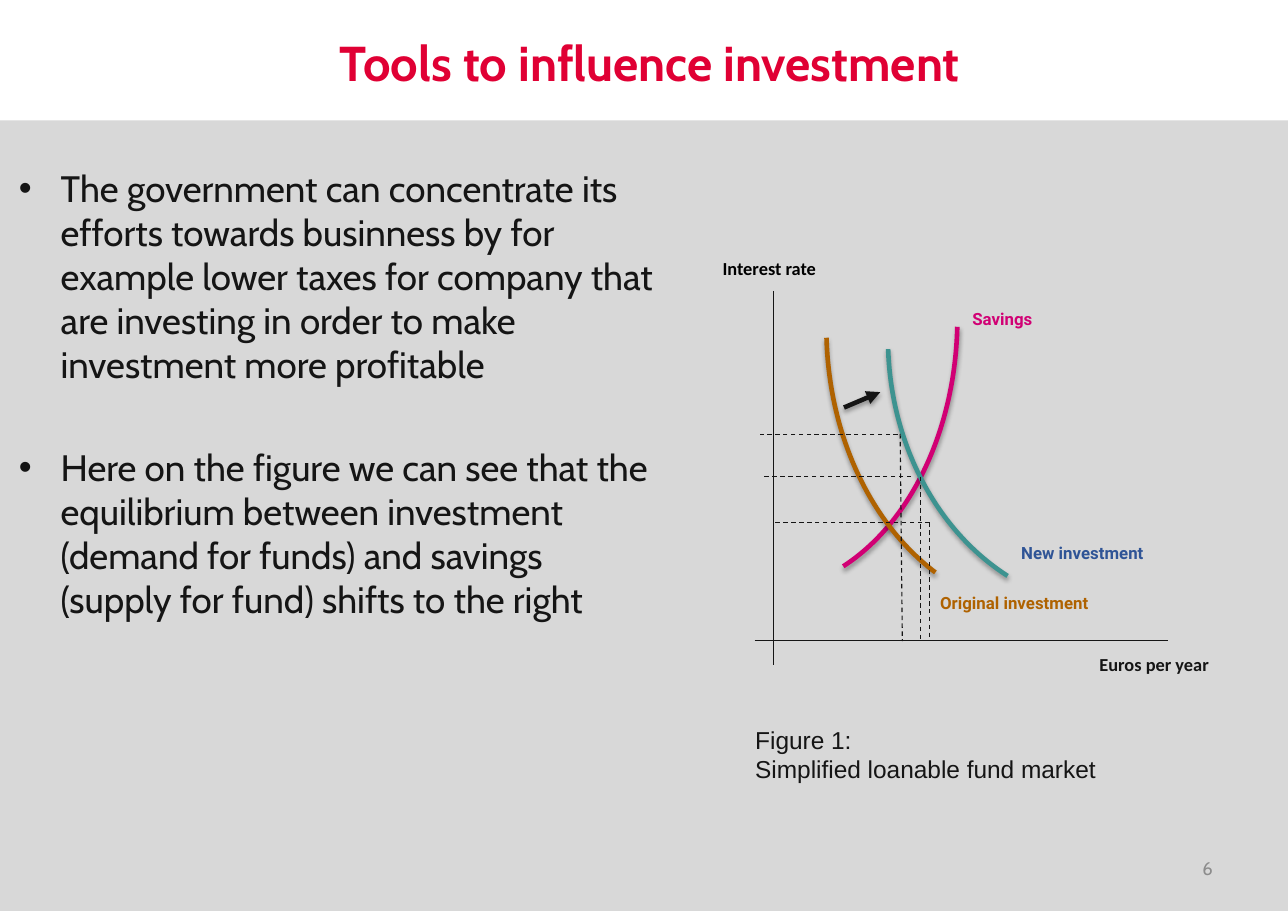
from lxml import etree
from pptx import Presentation
from pptx.dml.color import RGBColor
from pptx.enum.dml import MSO_LINE
from pptx.enum.shapes import MSO_CONNECTOR, MSO_SHAPE
from pptx.enum.text import MSO_ANCHOR, PP_ALIGN
from pptx.oxml.ns import qn
from pptx.util import Inches, Pt

WIDE, HIGH = Inches(11.69), Inches(8.27)
RECT, ARC = MSO_SHAPE.RECTANGLE, MSO_SHAPE.ARC
LINE, DASH = MSO_CONNECTOR.STRAIGHT, MSO_LINE.DASH
LEFT, MID, RIGHT = PP_ALIGN.LEFT, PP_ALIGN.CENTER, PP_ALIGN.RIGHT
TOP, CENTRE = MSO_ANCHOR.TOP, MSO_ANCHOR.MIDDLE

INK, RED, GREY, BAND, BLACK = "151515", "E00034", "8C8C8C", "D8D8D8", "000000"
PINK, BROWN, TEAL, BLUE = "D10074", "AF6200", "3D9390", "2F5496"

HEAD = {"name": "Cabin", "size": Pt(32), "bold": True}
BODY = {"name": "Cabin", "size": Pt(24)}
PAGE = {"name": "Cabin", "size": Pt(12)}
AXIS = {"name": "Calibri", "size": Pt(12), "bold": True}
CURVE = {"name": "Roboto", "size": Pt(11), "bold": True}
NOTE = {"name": "Arial", "size": Pt(16)}
THIN = {"width": Pt(0.75)}
GUIDE = {"width": Pt(0.75), "dash_style": DASH}
THICK = {"width": Pt(3)}

POINTS = [
    "The government can concentrate its efforts towards businness by for example lower taxes "
    "for company that are investing in order to make investment more profitable",
    "Here on the figure we can see that the equilibrium between investment (demand for funds) "
    "and savings (supply for fund) shifts to the right",
]
LABELS = [
    ("Interest rate", (50.75, 27.6, 17.96, 4.11), AXIS, BLACK, MID),
    ("Euros per year", (84.52, 71.15, 15.48, 8.1), AXIS, INK, LEFT),
    ("Savings", (74.65, 33.25, 25.35, 5.32), CURVE, PINK, LEFT),
    ("New investment", (78.44, 59.01, 20.19, 3.99), CURVE, BLUE, LEFT),
    ("Original investment", (72.15, 64.45, 15.31, 3.51), CURVE, BROWN, LEFT),
]
ARCS = [
    ((43.8, 4.84, 30.54, 60.1), PINK, 42.98, False),
    ((64.16, 4.84, 34.22, 62.27), BROWN, 39.32, True),
    ((68.95, 7.62, 35.33, 59.13), TEAL, 39.32, True),
]
AXES = [(60.05, 31.92, 60.05, 73.04), (58.6, 70.28, 90.68, 70.28)]
GUIDES = [
    (72.2, 57.32, 72.2, 70.25), (72.2, 57.32, 60.05, 57.32),
    (69.72, 47.7, 59.02, 47.7), (69.89, 47.64, 70.06, 70.37),
    (70.74, 52.33, 59.28, 52.33), (71.47, 52.33, 71.47, 70.37),
]


def place(box):
    """Turn percent shares of the slide into lengths."""
    return [int(share * side / 100) for share, side in zip(box, (WIDE, HIGH) * 2)]


def tint(code):
    """Turn a hex string into a colour."""
    return RGBColor.from_string(code)


def apply(item, look):
    """Set each format value on an item."""
    for key, value in look.items():
        setattr(item, key, value)


def stroke(shape, look, code):
    """Style the line of a shape."""
    shape.line.fill.solid()
    shape.line.fill.fore_color.rgb = tint(code)
    apply(shape.line, look)


def shade(shape, soft=False):
    """Give a shape an effect list, with a soft shadow if asked."""
    props = shape._element.spPr
    effects = etree.SubElement(props, qn("a:effectLst"))
    if soft:
        cast = etree.SubElement(effects, qn("a:outerShdw"), blurRad=str(Pt(3.1)),
                                dist=str(Pt(1.8)), dir="5400000", rotWithShape="0")
        hue = etree.SubElement(cast, qn("a:srgbClr"), val=BLACK)
        etree.SubElement(hue, qn("a:alpha"), val="35000")


def bullet(para):
    """Hang a round bullet on a paragraph."""
    props = para._p.get_or_add_pPr()
    props.set("marL", str(Inches(0.38)))
    props.set("indent", str(-Inches(0.38)))
    etree.SubElement(props, qn("a:buFont"), typeface="Arial")
    etree.SubElement(props, qn("a:buChar"), char="•")


def write(slide, lines, box, look, code, align=LEFT, anchor=TOP, gap=None):
    """Add a text box; a gap makes its lines a bulleted list."""
    frame = slide.shapes.add_textbox(*place(box)).text_frame
    apply(frame, {"word_wrap": True, "vertical_anchor": anchor})
    for rank, line in enumerate(lines):
        para = frame.add_paragraph() if rank else frame.paragraphs[0]
        para.alignment = align
        if gap:
            bullet(para)
            if rank:
                para.space_before = gap
        run = para.add_run()
        run.text = line
        apply(run.font, look)
        run.font.color.rgb = tint(code)


def band(slide, box, code):
    """Add a plain filled band."""
    shape = slide.shapes.add_shape(RECT, *place(box))
    shape.shadow.inherit = False
    shape.fill.solid()
    shape.fill.fore_color.rgb = tint(code)
    shape.line.fill.background()


def curve(slide, box, code, end, flip):
    """Add an arc that ends at a given adjustment value."""
    shape = slide.shapes.add_shape(ARC, *place(box))
    for rank, value in enumerate((1.57, end)):
        shape.adjustments[rank] = value
    if flip:
        shape._element.spPr.xfrm.set("flipH", "1")
    shape.fill.background()
    stroke(shape, THICK, code)
    shade(shape, soft=True)


def rule(slide, ends, look, arrow=False):
    """Add a straight line, with an arrowhead and shadow if asked."""
    line = slide.shapes.add_connector(LINE, *place(ends))
    stroke(line, look, INK)
    if arrow:
        etree.SubElement(line.line._get_or_add_ln(), qn("a:tailEnd"), type="triangle")
    shade(line, soft=arrow)


def main():
    """Build the slide and save it."""
    deck = Presentation()
    deck.slide_width, deck.slide_height = WIDE, HIGH
    slide = deck.slides.add_slide(deck.slide_layouts[6])
    band(slide, (0, 13.2, 100, 86.8), BAND)
    write(slide, ["Tools to influence investment"], (25.55, 2.4, 74.45, 8.7), HEAD, RED,
          anchor=CENTRE)
    write(slide, ["6"], (71.65, 92.6, 23.35, 5.3), PAGE, GREY, RIGHT, CENTRE)
    write(slide, POINTS, (0.62, 17.57, 51.33, 68.8), BODY, INK, gap=Pt(38.4))
    for ends in AXES:
        rule(slide, ends, THIN)
    for arc in ARCS:
        curve(slide, *arc)
    for ends in GUIDES:
        rule(slide, ends, GUIDE)
    for text, *rest in LABELS:
        write(slide, [text], *rest)
    write(slide, ["Figure 1:", "Simplified loanable fund market"],
          (57.8, 78.96, 37.64, 7.74), NOTE, INK)
    rule(slide, (65.53, 44.74, 68.35, 43.05), THICK, arrow=True)
    deck.save("out.pptx")


if __name__ == "__main__":
    main()
